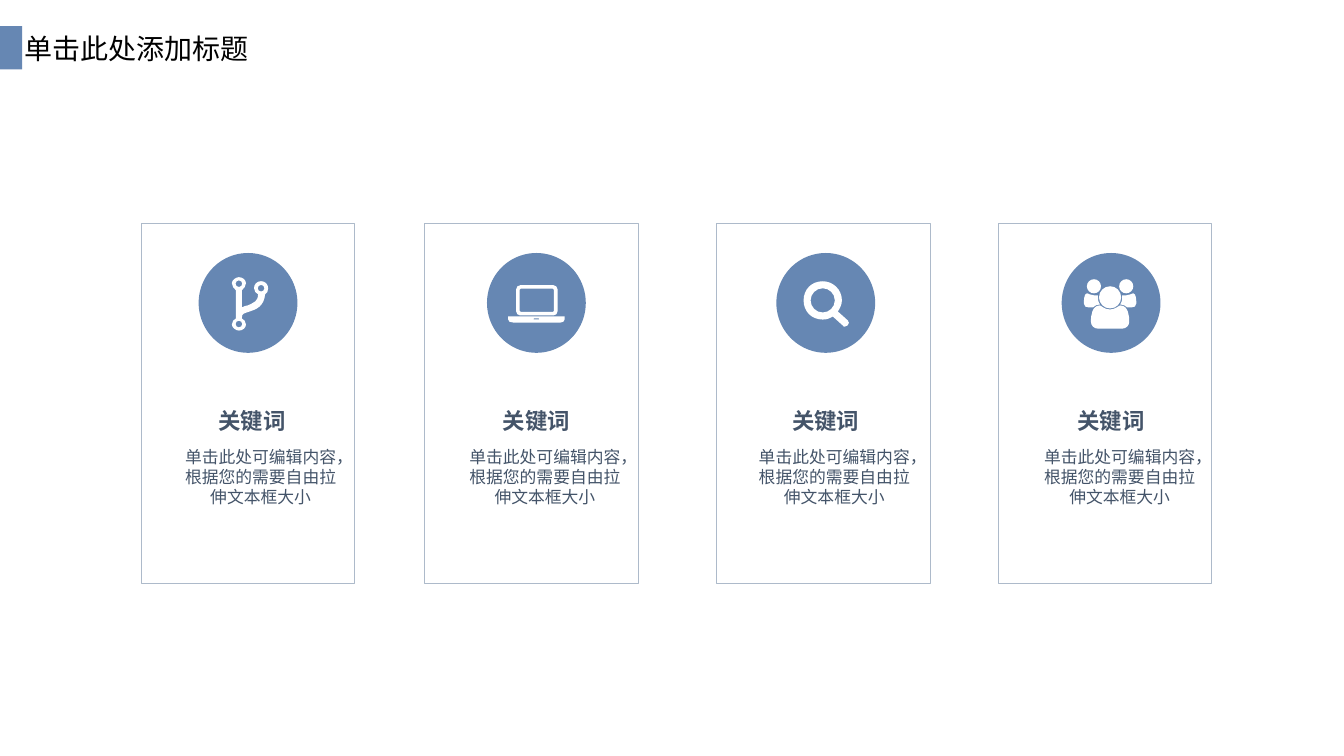
from copy import deepcopy
from dataclasses import dataclass

from pptx import Presentation
from pptx.dml.color import RGBColor
from pptx.enum.shapes import MSO_SHAPE as Kind
from pptx.enum.text import MSO_AUTO_SIZE as Auto, PP_ALIGN as Align
from pptx.oxml.ns import qn
from pptx.util import Inches, Pt

BLUE = RGBColor(0x66, 0x87, 0xB3)
EDGE = RGBColor(0xAD, 0xBA, 0xCA)
SLATE = RGBColor(0x44, 0x54, 0x69)
BLACK = RGBColor(0, 0, 0)
WHITE = RGBColor(0xFF, 0xFF, 0xFF)

HEAD = {"name": "Noto Sans CJK SC", "size": Pt(20)}
WORD = {"name": "Arial", "size": Pt(16), "bold": True}
BODY = {"name": "Arial", "size": Pt(12)}

FINE = 100  # path units per hundredth of an inch
BEND = 0.55  # control length of a quarter circle

# Steps of an outline: two numbers give a line, six a cubic curve
Loop = list[tuple[float, ...]]


def box(x: float, y: float, w: float, h: float, r: float) -> Loop:
    """Rectangle with rounded corners."""
    k = r * (1 - BEND)
    e, s = x + w, y + h
    return [
        (x + r, y), (e - r, y), (e - k, y, e, y + k, e, y + r),
        (e, s - r), (e, s - k, e - k, s, e - r, s),
        (x + r, s), (x + k, s, x, s - k, x, s - r),
        (x, y + r), (x, y + k, x + k, y, x + r, y),
    ]


def disc(x: float, y: float, r: float) -> Loop:
    loop = box(x - r, y - r, 2 * r, 2 * r, r)
    return loop[:1] + [step for step in loop if len(step) == 6]


def flip(loop: Loop, axis: float) -> Loop:
    return [tuple(v if n % 2 else 2 * axis - v for n, v in enumerate(step))
            for step in loop]


# Icon outlines, in hundredths of an inch from the icon's top left corner
BRANCH = [
    [(33, 17), (32, 29, 24, 32, 18, 34), (12, 36, 10, 36, 10, 40),
     (10, 41), (12, 42, 14, 44, 14, 47), (14, 50, 11, 53, 7, 53),
     (4, 53, 0, 50, 0, 47), (0, 44, 2, 42, 4, 41), (4, 13),
     (2, 11, 0, 9, 0, 6), (0, 3, 4, 0, 7, 0), (11, 0, 14, 3, 14, 6),
     (14, 9, 12, 11, 10, 13), (10, 30), (12, 29, 14, 28, 16, 28),
     (22, 25, 26, 24, 26, 17), (24, 16, 22, 14, 22, 11),
     (22, 7, 25, 4, 29, 4), (33, 4, 36, 7, 36, 11),
     (36, 14, 35, 16, 33, 17)],
    *(disc(x, y, 3.3) for x, y in ((7, 6.5), (7, 46.5), (29, 11))),
]
LAPTOP = [
    [(56, 31), (56, 34), (56, 36, 54, 37, 52, 37), (5, 37),
     (2, 37, 0, 36, 0, 34), (0, 31)],
    box(8, 0, 41, 30, 4),
    box(11.5, 3.5, 34, 23, 1),
    box(25, 33, 6, 1, 0.5),
]
SEARCH = [
    [(41, 45), (40, 45, 39, 45, 39, 44), (29, 35),
     (26, 37, 23, 38, 19, 38), (8, 38, 0, 30, 0, 19),
     (0, 8, 8, 0, 19, 0), (29, 0, 38, 8, 38, 19),
     (38, 23, 36, 27, 34, 30), (44, 39), (44, 40, 45, 41, 45, 41),
     (45, 43, 43, 45, 41, 45)],
    disc(19, 19, 12),
]
FRIEND = [
    [(9, 28), (5, 28), (2, 28, 0, 27, 0, 24), (0, 22, 0, 14, 3, 14),
     (4, 14, 7, 16, 10, 16), (11, 16, 13, 16, 14, 16),
     (14, 16, 14, 17, 14, 18), (14, 20, 14, 22, 16, 25),
     (13, 25, 11, 26, 9, 28)],
    disc(10, 7, 7),
]
TEAM = [
    *FRIEND,
    *(flip(loop, 26) for loop in FRIEND),
    [(38, 49), (14, 49), (10, 49, 7, 46, 7, 42), (7, 36, 8, 26, 16, 26),
     (17, 26, 20, 30, 26, 30), (31, 30, 35, 26, 36, 26),
     (44, 26, 45, 36, 45, 42), (45, 46, 42, 49, 38, 49)],
    disc(26, 18, 11),
]


@dataclass
class Card:
    left: float
    dot: float
    text: float
    icon: list[Loop]
    x: float
    y: float


CARDS = [
    Card(1.4, 1.97, 1.22, BRANCH, 2.3, 2.75),
    Card(4.21, 4.83, 4.04, LAPTOP, 5.04, 2.83),
    Card(7.11, 7.7, 6.91, SEARCH, 7.97, 2.79),
    Card(9.9, 10.53, 9.74, TEAM, 10.75, 2.77),
]


def paint(shape, color: RGBColor) -> None:
    shape.shadow.inherit = False
    shape.fill.solid()
    shape.fill.fore_color.rgb = color
    shape.line.fill.background()


def add_solid(slide, kind: Kind, *at: float) -> None:
    paint(slide.shapes.add_shape(kind, *map(Inches, at)), BLUE)


def add_frame(slide, *at: float) -> None:
    frame = slide.shapes.add_shape(Kind.RECTANGLE, *map(Inches, at))
    frame.shadow.inherit = False
    frame.fill.background()
    frame.line.color.rgb = EDGE
    frame.line.width = Pt(0.75)


def bend(shape, steps: Loop) -> None:
    """Turn the line of each six-number step into a cubic curve."""
    lines = list(shape.element.iter(qn("a:lnTo")))
    for line, step in zip(lines, steps):
        if len(step) == 6:
            line.tag = qn("a:cubicBezTo")
            for n in range(2):
                point = deepcopy(line[-1])
                point.set("x", str(round(step[2 * n] * FINE)))
                point.set("y", str(round(step[2 * n + 1] * FINE)))
                line.insert(n, point)


def add_icon(slide, card: Card) -> None:
    ends = [[(s[-2] * FINE, s[-1] * FINE) for s in loop] for loop in card.icon]
    pen = slide.shapes.build_freeform(*ends[0][0], Inches(0.01) / FINE)
    for n, loop in enumerate(ends):
        if n:
            pen.move_to(*loop[0])
        pen.add_line_segments(loop[1:], close=True)
    shape = pen.convert_to_shape(Inches(card.x), Inches(card.y))
    bend(shape, [step for loop in card.icon for step in loop[1:]])
    paint(shape, WHITE)


def add_text(slide, text: str, font: dict, color: RGBColor,
             *at: float) -> None:
    frame = slide.shapes.add_textbox(*map(Inches, at)).text_frame
    frame.word_wrap = True
    frame.auto_size = Auto.SHAPE_TO_FIT_TEXT
    para = frame.paragraphs[0]
    run = para.add_run()
    run.text = text
    for key, value in font.items():
        setattr(run.font, key, value)
    run.font.color.rgb = color
    if font is not HEAD:
        for side in ("left", "top", "right", "bottom"):
            setattr(frame, f"margin_{side}", 0)
        para.alignment = Align.CENTER
        para.space_before = Pt(font["size"].pt * 0.2)


def main() -> None:
    deck = Presentation()
    deck.slide_width, deck.slide_height = Inches(13.33), Inches(7.5)
    slide = deck.slides.add_slide(deck.slide_layouts[6])
    add_solid(slide, Kind.RECTANGLE, 0, 0.26, 0.22, 0.43)
    add_text(slide, "单击此处添加标题", HEAD, BLACK, 0.14, 0.26, 2.56, 0.44)
    for card in CARDS:
        add_frame(slide, card.left, 2.22, 2.12, 3.57)
    for card in CARDS:
        add_solid(slide, Kind.OVAL, card.dot, 2.51, 0.98, 0.99)
        add_icon(slide, card)
    for card in CARDS:
        add_text(slide, "关键词", WORD, SLATE, card.text, 4.04, 2.56, 0.27)
        add_text(slide, "单击此处可编辑内容，根据您的需要自由拉伸文本框大小",
                 BODY, SLATE, card.text + 0.61, 4.43, 1.51, 0.61)
    deck.save("out.pptx")


if __name__ == "__main__":
    main()
